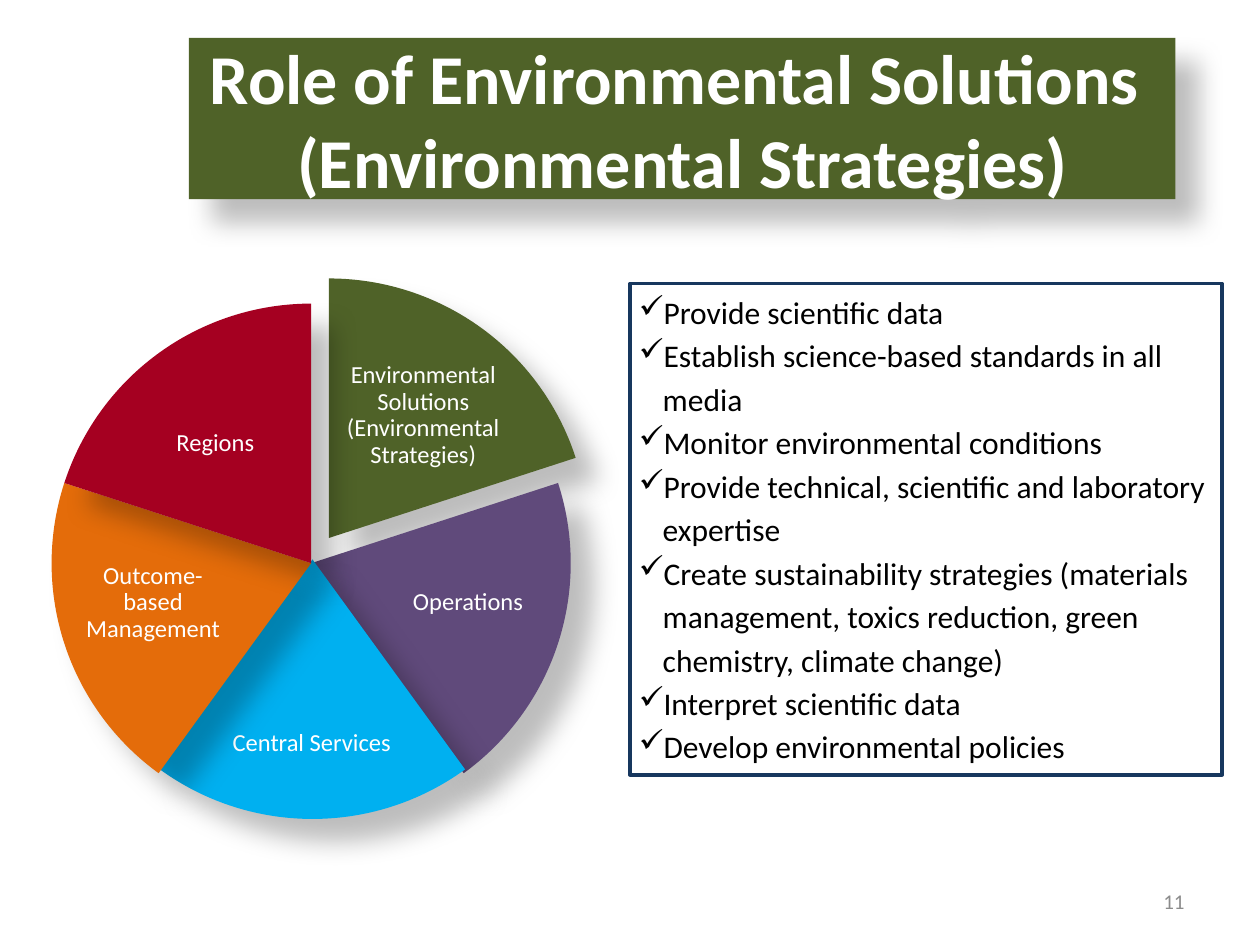
from typing import NamedTuple

from lxml import etree
from pptx import Presentation
from pptx.dml.color import RGBColor
from pptx.enum.shapes import MSO_SHAPE
from pptx.enum.text import MSO_ANCHOR, PP_ALIGN
from pptx.oxml.ns import qn
from pptx.util import Inches, Pt

RECTANGLE, PIE = MSO_SHAPE.RECTANGLE, MSO_SHAPE.PIE
TOP, MIDDLE = MSO_ANCHOR.TOP, MSO_ANCHOR.MIDDLE
LEFT, CENTER, RIGHT = PP_ALIGN.LEFT, PP_ALIGN.CENTER, PP_ALIGN.RIGHT

CELL = Inches(0.1)  # the slide is a grid of 100 columns by 75 rows
COLUMNS, ROWS = 100, 75
GREEN, WHITE = "4F6228", "FFFFFF"
PIE_SIZE = 41.2
PIE_LEFT, PIE_TOP = 4.1, 24.1
FULL_TURN = 216  # 360 degrees in adjustment units
FIRST_ANGLE = 162  # twelve o'clock


class Box(NamedTuple):
    column: float
    row: float
    width: float
    height: float

    def lengths(self) -> list[int]:
        return [round(value * CELL) for value in self]


class Wedge(NamedTuple):
    label: str
    color: str
    label_box: Box
    shift: tuple[float, float] = (0, 0)


class TextStyle(NamedTuple):
    size: float
    color: str
    align: PP_ALIGN = CENTER
    anchor: MSO_ANCHOR = MIDDLE
    bold: bool = False
    spacing: float = 1.0
    insets: tuple[float, float] = (0.1, 0.05)


WEDGES = [
    Wedge("Environmental Solutions (Environmental Strategies)", GREEN,
          Box(26.6, 28.2, 14, 9.6), (1.4, -2)),
    Wedge("Operations", "604A7B", Box(31, 42.7, 12.3, 10.3)),
    Wedge("Central Services", "00B0F0", Box(17.4, 54.6, 14.7, 8.8), (0.1, -0.3)),
    Wedge("Outcome- based Management", "E46C0A", Box(6, 42.7, 12.3, 10.3)),
    Wedge("Regions", "A50021", Box(10.1, 30.4, 14, 9.6)),
]
DUTIES = [
    "Provide scientific data",
    "Establish science-based standards in all media",
    "Monitor environmental conditions",
    "Provide technical, scientific and laboratory expertise",
    "Create sustainability strategies (materials management, toxics reduction, "
    "green chemistry, climate change)",
    "Interpret scientific data",
    "Develop environmental policies",
]
TITLE_STYLE = TextStyle(40, WHITE, bold=True)
LABEL_STYLE = TextStyle(14, WHITE, spacing=0.9, insets=(0.02, 0.02))
DUTY_STYLE = TextStyle(18, "000000", LEFT, TOP, spacing=1.15, insets=(0.07, 0.03))
NUMBER_STYLE = TextStyle(12, "8C8C8C", RIGHT)


def rgb(color: str) -> RGBColor:
    return RGBColor.from_string(color)


def add_shadow(shape) -> None:
    """Cast a soft shadow down and to the right."""
    effects = shape._element.spPr.find(qn("a:effectLst"))
    shadow = etree.SubElement(effects, qn("a:outerShdw"), blurRad=str(Pt(15)),
                              dist=str(Pt(18)), dir="2700000", algn="tl", rotWithShape="0")
    tint = etree.SubElement(shadow, qn("a:srgbClr"), val="000000")
    etree.SubElement(tint, qn("a:alpha"), val="26000")


def add_filled_shape(shapes, kind: MSO_SHAPE, box: Box, color: str):
    shape = shapes.add_shape(kind, *box.lengths())
    shape.shadow.inherit = False
    shape.fill.solid()
    shape.fill.fore_color.rgb = rgb(color)
    shape.line.fill.background()
    add_shadow(shape)
    return shape


def add_check_mark(paragraph) -> None:
    properties = paragraph._p.get_or_add_pPr()
    properties.set("marL", str(Inches(0.19)))
    properties.set("indent", str(-Inches(0.19)))
    etree.SubElement(properties, qn("a:buChar"), char="✓")


def write(shape, lines: list[str], style: TextStyle, checked: bool = False) -> None:
    frame = shape.text_frame
    side, edge = (Inches(inset) for inset in style.insets)
    frame_format = {"word_wrap": True, "vertical_anchor": style.anchor,
                    "margin_left": side, "margin_right": side,
                    "margin_top": edge, "margin_bottom": edge}
    for name, value in frame_format.items():
        setattr(frame, name, value)
    frame.text = "\n".join(lines)
    font_format = {"name": "Calibri", "size": Pt(style.size), "bold": style.bold}
    for paragraph in frame.paragraphs:
        paragraph.alignment = style.align
        paragraph.line_spacing = style.spacing
        if checked:
            add_check_mark(paragraph)
        for run in paragraph.runs:
            for name, value in font_format.items():
                setattr(run.font, name, value)
            run.font.color.rgb = rgb(style.color)


def add_text(shapes, box: Box, text: str, style: TextStyle) -> None:
    write(shapes.add_textbox(*box.lengths()), [text], style)


def add_title(shapes) -> None:
    banner = add_filled_shape(shapes, RECTANGLE, Box(15, 3, 78.3, 12.8), GREEN)
    write(banner, ["Role of Environmental Solutions \v(Environmental Strategies)"], TITLE_STYLE)


def add_duties(shapes) -> None:
    panel = shapes.add_shape(RECTANGLE, *Box(50, 22.5, 47, 39).lengths())
    panel.shadow.inherit = False
    panel.fill.background()
    panel.line.color.rgb = rgb("17375E")
    panel.line.width = Pt(2)
    write(panel, DUTIES, DUTY_STYLE, checked=True)


def add_wheel(shapes) -> None:
    """Draw equal wedges clockwise from twelve o'clock, each with its label."""
    wheel = shapes.add_group_shape().shapes
    step = FULL_TURN / len(WEDGES)
    for position, wedge in enumerate(WEDGES):
        right, down = wedge.shift
        box = Box(PIE_LEFT + right, PIE_TOP + down, PIE_SIZE, PIE_SIZE)
        sector = add_filled_shape(wheel, PIE, box, wedge.color)
        start = FIRST_ANGLE + position * step
        sector.adjustments[0] = start % FULL_TURN
        sector.adjustments[1] = (start + step) % FULL_TURN
        add_text(wheel, wedge.label_box, wedge.label, LABEL_STYLE)


def main() -> None:
    deck = Presentation()
    deck.slide_width, deck.slide_height = COLUMNS * CELL, ROWS * CELL
    shapes = deck.slides.add_slide(deck.slide_layouts[6]).shapes
    add_title(shapes)
    add_text(shapes, Box(71.7, 69.5, 23.3, 4), "11", NUMBER_STYLE)
    add_duties(shapes)
    add_wheel(shapes)
    deck.save("out.pptx")


if __name__ == "__main__":
    main()
